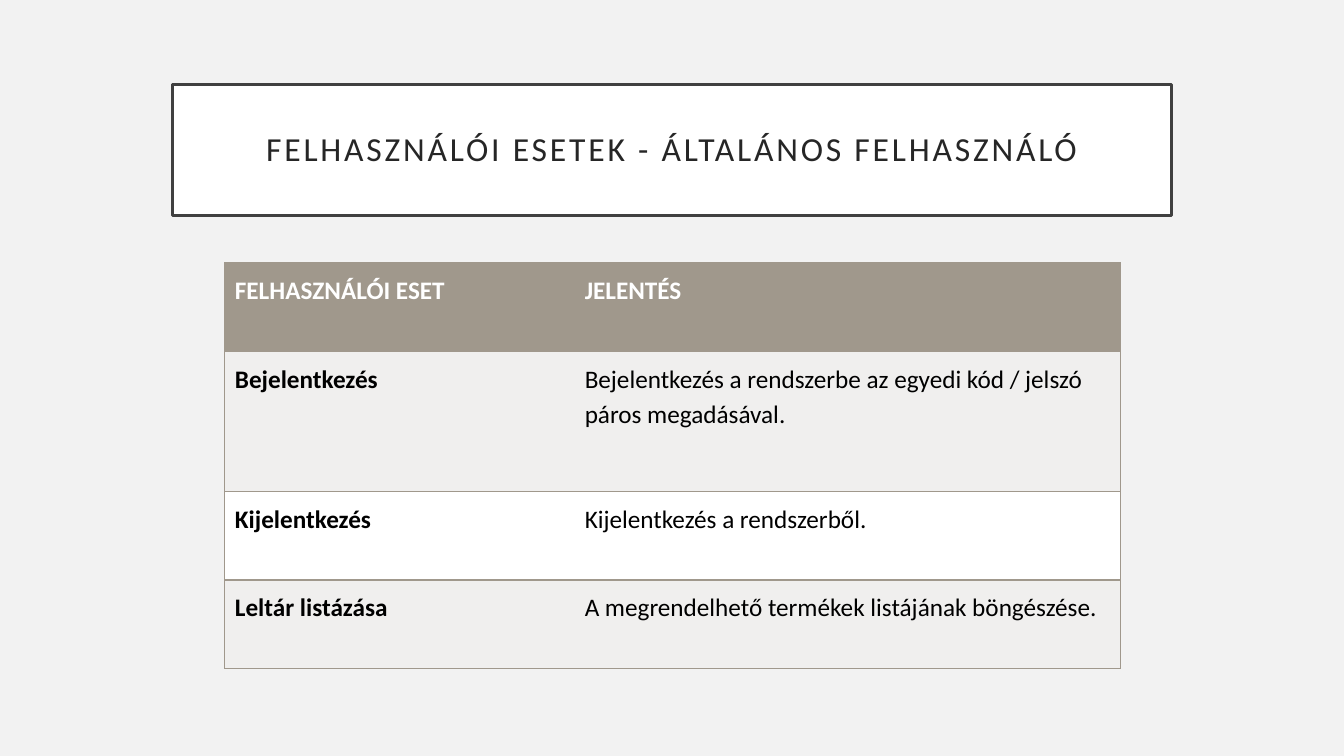
from lxml.etree import SubElement
from pptx import Presentation
from pptx.dml.color import RGBColor
from pptx.enum.text import MSO_ANCHOR, PP_ALIGN
from pptx.oxml.ns import qn
from pptx.util import Inches, Pt

COLORS = {
    "back": "F2F2F2",
    "white": "FFFFFF",
    "frame": "404040",
    "title": "262626",
    "text": "000000",
    "head": "A0988C",
    "band": "F0EFEE",
}
ROWS = [
    ("FELHASZNÁLÓI ESET", "JELENTÉS"),
    ("Bejelentkezés", "Bejelentkezés a rendszerbe az egyedi kód / jelszó páros megadásával."),
    ("Kijelentkezés", "Kijelentkezés a rendszerből."),
    ("Leltár listázása", "A megrendelhető termékek listájának böngészése."),
]
WIDTHS = [3.47, 5.41]
HEIGHTS = [0.88, 1.4, 0.88, 0.88]


def color(name):
    return RGBColor.from_string(COLORS[name])


def paint(fill, name):
    fill.solid()
    fill.fore_color.rgb = color(name)


def write(frame, text, size=18, tint="text", bold=False, align=PP_ALIGN.LEFT, space=1.15, track=0):
    frame.word_wrap = True
    para = frame.paragraphs[0]
    para.alignment = align
    para.line_spacing = space
    run = para.add_run()
    run.text = text
    font = run.font
    font.name = "Calibri"
    font.size = Pt(size)
    font.bold = bold
    font.color.rgb = color(tint)
    if track:
        run._r.get_or_add_rPr().set("spc", str(track * 100))


def border(cell, sides):
    props = cell._tc.get_or_add_tcPr()
    for spot, side in enumerate("LRTB"):
        line = SubElement(props, qn(f"a:ln{side}"), w=str(Pt(1)))
        if side in sides:
            fill = SubElement(line, qn("a:solidFill"))
            SubElement(fill, qn("a:srgbClr"), val=COLORS["head"])
        else:
            SubElement(line, qn("a:noFill"))
        props.insert(spot, line)


def add_title(slide, left, top, width, height):
    title = slide.shapes.title
    title.left, title.top = Inches(left), Inches(top)
    title.width, title.height = Inches(width), Inches(height)
    paint(title.fill, "white")
    title.line.color.rgb = color("frame")
    title.line.width = Pt(2.5)
    frame = title.text_frame
    frame.vertical_anchor = MSO_ANCHOR.MIDDLE
    frame.margin_left = frame.margin_right = Inches(0.2)
    frame.margin_top = frame.margin_bottom = Inches(0.2)
    write(frame, "FELHASZNÁLÓI ESETEK - ÁLTALÁNOS FELHASZNÁLÓ", size=24,
          tint="title", align=PP_ALIGN.CENTER, space=0.9, track=2)


def add_cases(slide, left, top, width, height):
    grid = slide.shapes.add_table(len(ROWS), len(WIDTHS), Inches(left), Inches(top),
                                  Inches(width), Inches(height)).table
    grid.first_row = grid.horz_banding = False
    for col, part in zip(grid.columns, WIDTHS):
        col.width = Inches(width * part / sum(WIDTHS))
    for row, part in zip(grid.rows, HEIGHTS):
        row.height = Inches(height * part / sum(HEIGHTS))
    for i, texts in enumerate(ROWS):
        for j, text in enumerate(texts):
            cell = grid.cell(i, j)
            cell.margin_left = cell.margin_right = Inches(0.1)
            cell.margin_top = cell.margin_bottom = Inches(0.08)
            paint(cell.fill, "head" if i == 0 else "band" if i % 2 else "white")
            border(cell, "RTB" if j else "LTB")
            write(cell.text_frame, text, tint="text" if i else "white", bold=i == 0 or j == 0)


def main():
    deck = Presentation()
    deck.slide_width, deck.slide_height = Inches(13.33), Inches(7.5)
    slide = deck.slides.add_slide(deck.slide_layouts[5])
    paint(slide.background.fill, "back")
    add_title(slide, 1.71, 0.84, 9.91, 1.3)
    add_cases(slide, 2.23, 2.61, 8.88, 4.02)
    deck.save("out.pptx")


if __name__ == "__main__":
    main()
